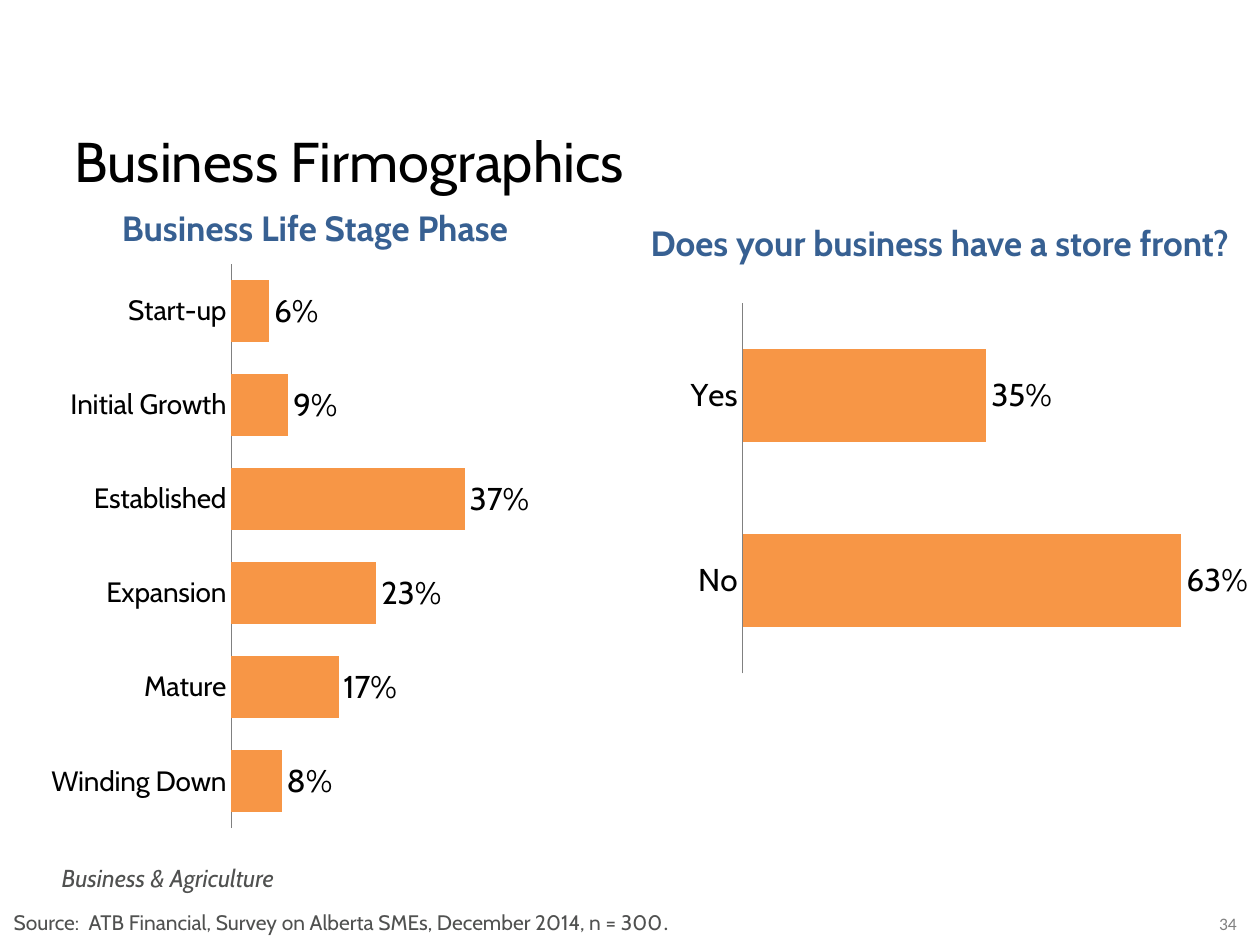
from lxml import etree
from pptx import Presentation
from pptx.chart.data import CategoryChartData
from pptx.dml.color import RGBColor
from pptx.enum.chart import XL_CHART_TYPE, XL_LABEL_POSITION, XL_TICK_MARK
from pptx.enum.text import MSO_ANCHOR, PP_ALIGN
from pptx.oxml.ns import qn
from pptx.util import Inches, Pt

BLACK = RGBColor(0x00, 0x00, 0x00)
GREY = RGBColor(0x50, 0x51, 0x50)
LIGHT_GREY = RGBColor(0x80, 0x80, 0x80)
BLUE = RGBColor(0x37, 0x60, 0x92)
ORANGE = RGBColor(0xF7, 0x96, 0x46)
BODY_FONT, NUMBER_FONT = "Cabin", "Calibri"

TITLE = "Business Firmographics"
TITLE_BOX = (0.49, 0.95, 5.84, 0.64)

HEADINGS = [
    ("Business Life Stage Phase", (0.75, 1.59, 3.5, 0.43)),
    ("Does your business have a store front?", (4.41, 1.71, 6.1, 0.44)),
]
SECTION = ("Business & Agriculture", (0.39, 6.8, 2.81, 0.34))
SOURCE = (
    "Source:  ATB Financial, Survey on Alberta SMEs, December 2014, n = 300",
    (0.01, 7.17, 9.31, 0.3),
)
PAGE_NUMBER = ("34", (9.5, 7.2, 0.49, 0.27))

# plot holds the inner plot area as fractions of the chart: x, y, w, h
CHARTS = [
    {
        "box": (-0.72, 2.09, 5.81, 4.67),
        "shares": {
            "Start-up": 0.06,
            "Initial Growth": 0.09,
            "Established": 0.37,
            "Expansion": 0.23,
            "Mature": 0.17,
            "Winding Down": 0.08,
        },
        "plot": (0.44, 0, 0.56, 0.96),
        "maximum": 0.65,
        "gap": 50,
        "category_size": 16,
    },
    {
        "box": (3.44, 2.28, 6.56, 3.07),
        "shares": {"Yes": 0.35, "No": 0.63},
        "plot": (0.374, 0.04, 0.59, 0.96),
        "maximum": 0.7,
        "gap": 100,
        "category_size": 18,
    },
]


def style(font, size, color, name=BODY_FONT, bold=False, italic=False):
    font.name, font.size = name, Pt(size)
    font.bold, font.italic = bold, italic
    font.color.rgb = color


def add_text(slide, text, box, size, color, align=PP_ALIGN.LEFT, **font_options):
    frame = slide.shapes.add_textbox(*map(Inches, box)).text_frame
    frame.word_wrap = True
    paragraph = frame.paragraphs[0]
    paragraph.text = text
    paragraph.alignment = align
    style(paragraph.font, size, color, **font_options)
    return paragraph


def fix_plot_area(chart, fractions):
    """Pin the inner plot area, which python-pptx cannot position itself."""
    plot_area = chart.plots[0]._element.getparent()
    for automatic in plot_area.findall(qn("c:layout")):
        plot_area.remove(automatic)
    layout = etree.Element(qn("c:layout"))
    manual = etree.SubElement(layout, qn("c:manualLayout"))
    settings = [("layoutTarget", "inner"), ("xMode", "edge"), ("yMode", "edge")]
    settings += zip("xywh", fractions)
    for tag, value in settings:
        etree.SubElement(manual, qn(f"c:{tag}")).set("val", str(value))
    plot_area.insert(0, layout)


def add_share_chart(slide, spec_box, shares, plot_fractions, maximum, gap, category_size):
    data = CategoryChartData(number_format="0%")
    data.categories = list(shares)
    data.add_series("Series 1", list(shares.values()))
    chart = slide.shapes.add_chart(
        XL_CHART_TYPE.BAR_CLUSTERED, *map(Inches, spec_box), data
    ).chart
    chart.has_legend = False
    chart.has_title = False
    style(chart.font, 18, BLACK)

    categories = chart.category_axis
    categories.reverse_order = True
    categories.major_tick_mark = categories.minor_tick_mark = XL_TICK_MARK.NONE
    categories.format.line.color.rgb = LIGHT_GREY
    categories.format.line.width = Pt(0.75)
    style(categories.tick_labels.font, category_size, BLACK)

    values = chart.value_axis
    values.minimum_scale, values.maximum_scale = 0, maximum
    values.has_major_gridlines = False
    values.visible = False

    bars = chart.plots[0]
    bars.gap_width = gap
    bars.vary_by_categories = False
    fill = bars.series[0].format.fill
    fill.solid()
    fill.fore_color.rgb = ORANGE

    bars.has_data_labels = True
    labels = bars.data_labels
    labels.show_value = True
    labels.number_format, labels.number_format_is_linked = "0%", False
    labels.position = XL_LABEL_POSITION.OUTSIDE_END
    style(labels.font, 18, BLACK)
    fix_plot_area(chart, plot_fractions)


def main():
    deck = Presentation()
    deck.slide_width, deck.slide_height = Inches(10), Inches(7.5)
    slide = deck.slides.add_slide(deck.slide_layouts.get_by_name("Title Only"))

    title = slide.shapes.title
    title.left, title.top, title.width, title.height = map(Inches, TITLE_BOX)
    title.text_frame.text = TITLE
    title.text_frame.vertical_anchor = MSO_ANCHOR.TOP
    heading = title.text_frame.paragraphs[0]
    heading.alignment = PP_ALIGN.LEFT
    style(heading.font, 32, BLACK)

    for chart in CHARTS:
        add_share_chart(slide, *chart.values())
    for text, box in HEADINGS:
        add_text(slide, text, box, 20, BLUE, PP_ALIGN.CENTER, bold=True)

    add_text(slide, *SECTION, 14, GREY, italic=True)
    source = add_text(slide, *SOURCE, 12, GREY)
    full_stop = source.add_run()
    full_stop.text = "."
    full_stop.font.name = NUMBER_FONT
    add_text(slide, *PAGE_NUMBER, 10, LIGHT_GREY, PP_ALIGN.CENTER, name=NUMBER_FONT)

    deck.save("out.pptx")


if __name__ == "__main__":
    main()
